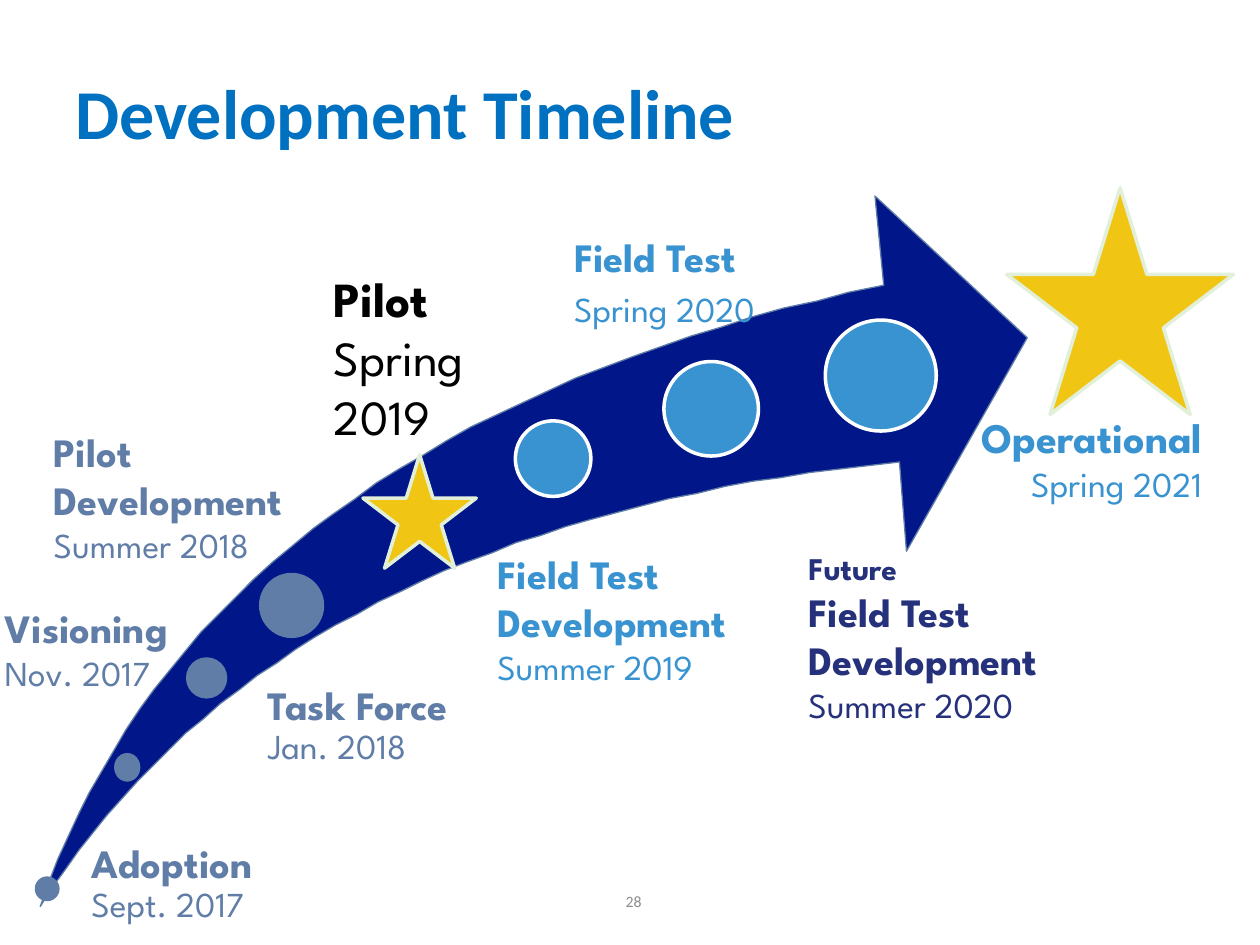
from pptx import Presentation
from pptx import util as u
from pptx.dml.color import RGBColor
from pptx.enum import shapes, text

COLORS = {
    "navy": "001689", "slate": "607DA7", "sky": "3993D0", "indigo": "25317B",
    "gold": "F0C514", "mint": "E2F0D9", "white": "FFFFFF", "black": "000000",
    "title": "0070C0", "gray": "8C8C8C",
}
LABEL_FONT, BASE_FONT = "League Spartan", "Calibri"
INSET = 12

# Arrow: two Bezier edges joined by the corners of the head
UPPER_EDGE = [(23, 517.7), (85.7, 337), (246.2, 218.9), (504.7, 162.7)]
HEAD = [(499.7, 112.3), (586.8, 193), (518.4, 314.6)]
LOWER_EDGE = [(514.1, 264.2), (280.8, 286.6), (116.6, 370.8), (23, 517.7)]

# Markers: kind, left, top, width, height, fill, line
MARKERS = [
    ("circle", 20.9, 501.8, 12.2, 12.2, "slate", "slate"),
    ("circle", 66.2, 431.3, 13, 14.4, "slate", "slate"),
    ("circle", 107.3, 376.6, 21.6, 21.6, "slate", "slate"),
    ("circle", 149, 328.3, 35.3, 35.3, "slate", "slate"),
    ("star", 207.4, 259.9, 64.8, 64.8, "gold", "mint"),
    ("circle", 294.5, 240.5, 43.2, 43.2, "sky", "white"),
    ("circle", 471.6, 182.9, 63.4, 63.4, "sky", "white"),
    ("circle", 379.4, 206.6, 54, 54, "sky", "white"),
    ("star", 575.3, 107.3, 129.6, 129.6, "gold", "mint"),
]
# The two largest circles trade places along the arrow
MARKERS[6:8] = [
    ("circle", 379.4, 206.6, 54, 54, "sky", "white"),
    ("circle", 471.6, 182.9, 63.4, 63.4, "sky", "white"),
]

# Labels: box, color, line spacing, paragraphs of lines (text, size, bold)
LABELS = [
    ((40.3, 482.4, 129.6, 67.7), "slate", 0.9,
     [[("Adoption", 23, True), ("Sept. 2017", 20, False)]]),
    ((-9.4, 344.9, 116.6, 87.1), "slate", 1,
     [[("Visioning", 23, True), ("Nov. 2017", 20, False)]]),
    ((141.1, 391.7, 140.4, 87.1), "slate", 0.9,
     [[("Task Force", 23, True), ("Jan. 2018", 20, False)]]),
    ((18.7, 244.1, 171.4, 103), "slate", 1,
     [[("Pilot", 23, True)],
      [("Development", 23, True), ("Summer 2018", 20, False)]]),
    ((178.6, 153.4, 129.6, 87.1), "black", 1,
     [[("Pilot", 28, True), ("Spring 2019", 28, False)]]),
    ((272.2, 313.9, 171.4, 103), "sky", 1,
     [[("Field Test", 23, True)],
      [("Development", 23, True), ("Summer 2019", 20, False)]]),
    ((316.1, 128.9, 129.6, 67.7), "sky", 1.15,
     [[("Field Test", 23, True), ("Spring 2020", 20, False)]]),
    ((450, 313.9, 171.4, 103), "indigo", 1,
     [[("Future", 18, True)], [("Field Test", 23, True)],
      [("Development", 23, True), ("Summer 2020", 20, False)]]),
]
OPERATIONAL = ((541.4, 235.4, 145.6, 115.9), "sky", 1,
               [[("Operational", 24, True), ("Spring 2021", 20, False)]])


def rgb(name):
    return RGBColor.from_string(COLORS[name])


def points(values):
    return [u.Pt(value) for value in values]


def paint(shape, fill, line, width):
    shape.shadow.inherit = False
    shape.fill.solid()
    shape.fill.fore_color.rgb = rgb(fill)
    shape.line.color.rgb = rgb(line)
    shape.line.width = u.Pt(width)


def add_span(para, words, size, bold, color, font):
    span = para.add_run()
    span.text = words
    span.font.name, span.font.size, span.font.bold = font, u.Pt(size), bold
    span.font.color.rgb = rgb(color)


def add_label(page, place, color, spacing, paragraphs, align=text.PP_ALIGN.LEFT):
    frame = page.shapes.add_textbox(*points(place)).text_frame
    frame.word_wrap = True
    frame.margin_left = u.Pt(INSET)
    frame.margin_top = frame.margin_right = frame.margin_bottom = 0
    for index, lines in enumerate(paragraphs):
        para = frame.add_paragraph() if index else frame.paragraphs[0]
        para.alignment, para.line_spacing = align, spacing
        for number, (words, size, bold) in enumerate(lines):
            if number:
                para.add_line_break()
            add_span(para, words, size, bold, color, LABEL_FONT)


def bezier(controls, steps=40):
    weights = (1, 3, 3, 1)
    return [
        tuple(sum(w * (1 - t) ** (3 - i) * t ** i * point[axis]
                  for i, (w, point) in enumerate(zip(weights, controls)))
              for axis in (0, 1))
        for t in (step / steps for step in range(steps + 1))
    ]


def add_arrow(page):
    outline = bezier(UPPER_EDGE) + HEAD + bezier(LOWER_EDGE)[:-1]
    builder = page.shapes.build_freeform(*outline[0], scale=u.Pt(1))
    builder.add_line_segments(outline[1:], close=True)
    paint(builder.convert_to_shape(), "navy", "slate", 0.75)


def add_marker(page, kind, left, top, width, height, fill, line):
    presets = {"circle": shapes.MSO_SHAPE.OVAL,
               "star": shapes.MSO_SHAPE.STAR_5_POINT}
    marker = page.shapes.add_shape(
        presets[kind], *points((left, top, width, height)))
    paint(marker, fill, line, 2)


def add_title(page):
    title = page.shapes.title
    title.left, title.top, title.width, title.height = points((36, 21.6, 648, 90))
    title.text_frame.vertical_anchor = text.MSO_ANCHOR.MIDDLE
    para = title.text_frame.paragraphs[0]
    para.alignment, para.line_spacing = text.PP_ALIGN.LEFT, 0.9
    add_span(para, "Development Timeline", 40, True, "title", BASE_FONT)


def add_page_number(page):
    box = page.shapes.add_textbox(*points((211.7, 500.4, 162, 28.8)))
    box.text_frame.word_wrap = True
    box.text_frame.vertical_anchor = text.MSO_ANCHOR.MIDDLE
    para = box.text_frame.paragraphs[0]
    para.alignment = text.PP_ALIGN.RIGHT
    add_span(para, "28", 9, False, "gray", BASE_FONT)


def main():
    deck = Presentation()
    deck.slide_width, deck.slide_height = points((720, 540))
    page = deck.slides.add_slide(deck.slide_layouts[5])
    add_title(page)
    add_page_number(page)
    add_arrow(page)
    for label in LABELS:
        add_label(page, *label)
    add_label(page, *OPERATIONAL, align=text.PP_ALIGN.RIGHT)
    for marker in MARKERS:
        add_marker(page, *marker)
    deck.save("out.pptx")


if __name__ == "__main__":
    main()
